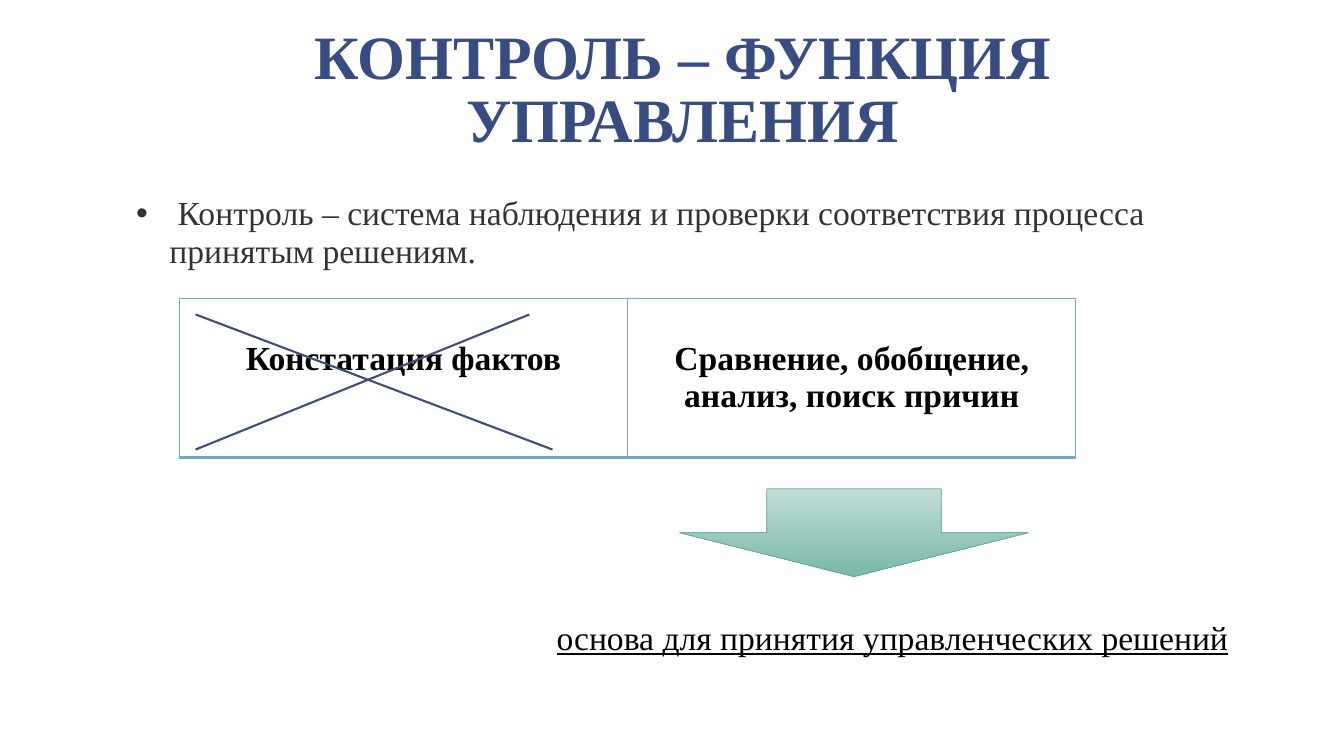
from lxml import etree
from pptx import Presentation
from pptx.dml.color import RGBColor
from pptx.enum.shapes import MSO_CONNECTOR, MSO_SHAPE
from pptx.enum.text import MSO_ANCHOR, PP_ALIGN
from pptx.oxml.ns import qn
from pptx.util import Inches, Pt

STRAIGHT = MSO_CONNECTOR.STRAIGHT
DOWN_ARROW = MSO_SHAPE.DOWN_ARROW
TOP, BOTTOM = MSO_ANCHOR.TOP, MSO_ANCHOR.BOTTOM
LEFT, CENTER = PP_ALIGN.LEFT, PP_ALIGN.CENTER

NAVY = RGBColor(0x37, 0x4C, 0x81)
GRAY = RGBColor(0x33, 0x33, 0x33)
BLACK = RGBColor(0, 0, 0)
CROSS = RGBColor(0x41, 0x4E, 0x77)
BORDER = RGBColor(0x70, 0xAA, 0xC4)
DIVIDER = RGBColor(0x8C, 0xA3, 0xAE)
ARROW_LIGHT = RGBColor(0xC2, 0xDD, 0xD6)
ARROW_DARK = RGBColor(0x78, 0xB8, 0xA8)
ARROW_LINE = RGBColor(0x61, 0xA7, 0x96)
FONT = "Times New Roman"


def add_run(paragraph, text, color, size=24, bold=False, underline=False, font=FONT):
    run = paragraph.add_run()
    run.text = text
    run.font.name = font
    run.font.size = Pt(size)
    run.font.bold = bold
    run.font.underline = underline
    run.font.color.rgb = color


def add_text_box(slide, left, top, width, height, spacing, align=LEFT, anchor=TOP):
    """Add an empty wrapped text box and return its first paragraph."""
    frame = slide.shapes.add_textbox(
        Inches(left), Inches(top), Inches(width), Inches(height)).text_frame
    frame.word_wrap = True
    frame.vertical_anchor = anchor
    frame.margin_left = frame.margin_right = Inches(0.13)
    frame.margin_top = frame.margin_bottom = Inches(0.07)
    paragraph = frame.paragraphs[0]
    paragraph.alignment = align
    paragraph.line_spacing = spacing
    return paragraph


def add_bullet(paragraph):
    properties = paragraph._p.get_or_add_pPr()
    properties.set("marL", str(Inches(0.33)))
    properties.set("indent", str(-Inches(0.33)))
    etree.SubElement(properties, qn("a:buFont"), typeface="Arial")
    etree.SubElement(properties, qn("a:buChar"), char="•")


def set_borders(cell, borders):
    """Draw the (color, points) borders in the order left, right, top, bottom."""
    properties = cell._tc.get_or_add_tcPr()
    for index, (side, (color, points)) in enumerate(zip("LRTB", borders)):
        line = etree.Element(qn(f"a:ln{side}"), w=str(Pt(points)))
        fill = etree.SubElement(line, qn("a:solidFill"))
        etree.SubElement(fill, qn("a:srgbClr"), val=str(color))
        properties.insert(index, line)


def add_comparison_table(slide, texts):
    table = slide.shapes.add_table(
        1, len(texts), Inches(1.78), Inches(2.96), Inches(8.89), Inches(1.58)).table
    table.first_row = False
    table.horz_banding = False
    outer, inner, bottom = (BORDER, 1), (DIVIDER, 1), (BORDER, 2.5)
    for column, text in enumerate(texts):
        cell = table.cell(0, column)
        cell.fill.background()
        cell.margin_top = Inches(0.42)
        left = inner if column else outer
        right = inner if column < len(texts) - 1 else outer
        set_borders(cell, (left, right, outer, bottom))
        paragraph = cell.text_frame.paragraphs[0]
        paragraph.alignment = CENTER
        add_run(paragraph, text, BLACK, bold=True)


def add_line(slide, start_x, start_y, end_x, end_y):
    line = slide.shapes.add_connector(
        STRAIGHT, Inches(start_x), Inches(start_y), Inches(end_x), Inches(end_y))
    line.line.color.rgb = CROSS
    line.line.width = Pt(1.5)
    etree.SubElement(line._element.spPr, qn("a:effectLst"))


def add_down_arrow(slide):
    arrow = slide.shapes.add_shape(
        DOWN_ARROW, Inches(6.74), Inches(4.85), Inches(3.46), Inches(0.87))
    arrow.shadow.inherit = False
    arrow.fill.gradient()
    arrow.fill.gradient_angle = 270
    for stop, (position, color) in zip(
            arrow.fill.gradient_stops, ((0, ARROW_LIGHT), (1, ARROW_DARK))):
        stop.position = position
        stop.color.rgb = color
    arrow.line.color.rgb = ARROW_LINE
    arrow.line.width = Pt(0.5)


def main():
    presentation = Presentation()
    presentation.slide_width = Inches(13.33)
    presentation.slide_height = Inches(7.5)
    slide = presentation.slides.add_slide(presentation.slide_layouts[6])

    title = add_text_box(slide, 1.22, 0.08, 11.11, 1.53, 0.85, CENTER, BOTTOM)
    add_run(title, "КОНТРОЛЬ – ФУНКЦИЯ УПРАВЛЕНИЯ", NAVY, size=44, bold=True)

    definition = add_text_box(slide, 1.22, 1.86, 11.11, 0.95, 0.95)
    add_bullet(definition)
    add_run(definition, " ", GRAY, font="Roboto")
    add_run(definition, "Контроль – система наблюдения и проверки соответствия "
            "процесса принятым решениям.", GRAY)

    add_comparison_table(
        slide, ("Констатация фактов", "Сравнение, обобщение, анализ, поиск причин"))
    add_line(slide, 1.94, 3.12, 5.48, 4.46)
    add_line(slide, 1.94, 4.46, 5.25, 3.12)
    add_down_arrow(slide)

    conclusion = add_text_box(slide, 5.39, 6.08, 7.1, 0.5, 0.95)
    add_run(conclusion, "основа для принятия управленческих решений",
            BLACK, underline=True)

    presentation.save("out.pptx")


if __name__ == "__main__":
    main()
